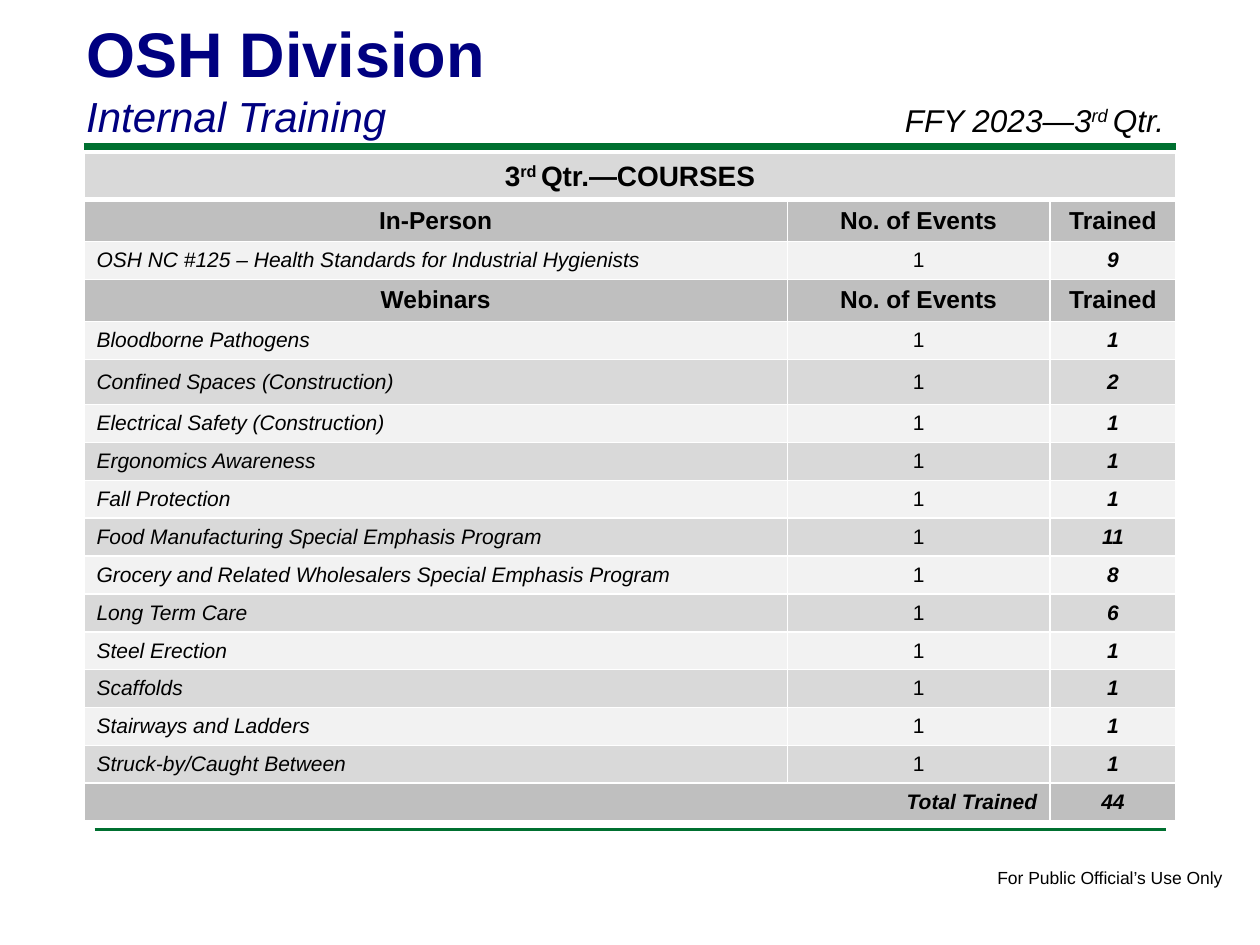
from dataclasses import dataclass

from lxml.etree import SubElement
from pptx import Presentation
from pptx.dml.color import RGBColor
from pptx.enum.text import MSO_ANCHOR, MSO_AUTO_SIZE, PP_ALIGN
from pptx.oxml.ns import qn
from pptx.util import Inches, Pt


@dataclass(frozen=True)
class Theme:
    font: str = "Arial"
    navy: str = "000080"
    green: str = "007030"
    black: str = "000000"
    white: str = "FFFFFF"
    heading_fill: str = "BFBFBF"
    dark_band: str = "D9D9D9"
    light_band: str = "F2F2F2"
    title: int = 36
    subtitle: int = 24
    period: int = 18
    table_title: int = 16
    heading: int = 14
    body: int = 12
    footer: int = 10


theme = Theme()

presentation = Presentation()
presentation.slide_width = Inches(10)
presentation.slide_height = Inches(7.5)
slide = presentation.slides.add_slide(presentation.slide_layouts[5])

# Grid: 12 columns by 90 rows
column = presentation.slide_width / 12
row = presentation.slide_height / 90


def write(paragraph, text, size, color=theme.black, bold=False, italic=False,
          align=PP_ALIGN.LEFT):
    """Fill a paragraph; the part between ^ marks is superscript."""
    paragraph.alignment = align
    for index, part in enumerate(text.split("^")):
        run = paragraph.add_run()
        run.text = part
        if index % 2:
            run.font._element.set("baseline", "30000")
    font = paragraph.font
    font.name, font.size = theme.font, Pt(size)
    font.bold, font.italic = bold, italic
    font.color.rgb = RGBColor.from_string(color)


def fill_cell(cell, text, fill, size, bottom=1, **style):
    """Write a middle-anchored cell with white borders and a plain fill."""
    cell.vertical_anchor = MSO_ANCHOR.MIDDLE
    write(cell.text_frame.paragraphs[0], text, size, **style)
    properties = cell._tc.get_or_add_tcPr()
    for side, width in (("L", 1), ("R", 1), ("T", 1), ("B", bottom)):
        border = SubElement(properties, qn(f"a:ln{side}"), w=str(Pt(width)))
        solid = SubElement(border, qn("a:solidFill"))
        SubElement(solid, qn("a:srgbClr"), val=theme.white)
    cell.fill.solid()
    cell.fill.fore_color.rgb = RGBColor.from_string(fill)


# Rules above and below the table
for inset, level, width in ((0.8, 14, 4), (0.9, 79, 2)):
    rule = slide.shapes.add_connector(
        1, int(inset * column), int(level * row),
        int((12 - inset) * column), int(level * row))
    rule.line.color.rgb = RGBColor.from_string(theme.green)
    rule.line.width = Pt(width)
    SubElement(rule._element.spPr, qn("a:effectLst"))

# Title and subtitle
title = slide.shapes.title
title.left, title.top = int(0.7 * column), int(0.7 * row)
title.width, title.height = int(9.9 * column), int(13.3 * row)
frame = title.text_frame
frame.word_wrap = True
frame.auto_size = MSO_AUTO_SIZE.NONE
frame.vertical_anchor = MSO_ANCHOR.BOTTOM
write(frame.paragraphs[0], "OSH Division", theme.title, theme.navy, bold=True)
write(frame.add_paragraph(), "Internal Training", theme.subtitle, theme.navy,
      italic=True)

# Reporting period and footer
for text, left, top, width, height, size, italic, wrap in (
        ("FFY 2023—3^rd ^Qtr.", 8.5, 9, 3, 4.8, theme.period, True, True),
        ("For Public Official’s Use Only", 9.38, 82, 2.41, 3.2, theme.footer,
         False, False)):
    box = slide.shapes.add_textbox(int(left * column), int(top * row),
                                   int(width * column), int(height * row))
    box.text_frame.word_wrap = wrap
    write(box.text_frame.paragraphs[0], text, size, italic=italic)

# Course table: each section has a heading row and its courses
sections = (
    ("In-Person", (
        ("OSH NC #125 – Health Standards for Industrial Hygienists", 1, 9),)),
    ("Webinars", (
        ("Bloodborne Pathogens", 1, 1),
        ("Confined Spaces (Construction)", 1, 2),
        ("Electrical Safety (Construction)", 1, 1),
        ("Ergonomics Awareness", 1, 1),
        ("Fall Protection", 1, 1),
        ("Food Manufacturing Special Emphasis Program", 1, 11),
        ("Grocery and Related Wholesalers Special Emphasis Program", 1, 8),
        ("Long Term Care", 1, 6),
        ("Steel Erection", 1, 1),
        ("Scaffolds", 1, 1),
        ("Stairways and Ladders", 1, 1),
        ("Struck-by/Caught Between", 1, 1))),
)
row_heights = [0.32] + [0.29] * 3 + [0.26, 0.36] + [0.26] * 11
table = slide.shapes.add_table(
    len(row_heights), 3, int(0.8 * column), int(14.6 * row),
    int(10.4 * column), Inches(sum(row_heights))).table
table.first_row = table.horz_banding = False
for table_column, share in zip(table.columns, (6.7, 2.5, 1.2)):
    table_column.width = int(share * column)
for table_row, height in zip(table.rows, row_heights):
    table_row.height = Inches(height)

# Table title
table.cell(0, 0).merge(table.cell(0, 2))
fill_cell(table.cell(0, 0), "3^rd ^Qtr.—COURSES", theme.dark_band,
          theme.table_title, bottom=3, bold=True, align=PP_ALIGN.CENTER)

# Sections
position = 1
for section, courses in sections:
    for index, text in enumerate((section, "No. of Events", "Trained")):
        fill_cell(table.cell(position, index), text, theme.heading_fill,
                  theme.heading, bold=True, align=PP_ALIGN.CENTER)
    position += 1
    for number, course in enumerate(courses):
        fill = theme.dark_band if number % 2 else theme.light_band
        for index, value in enumerate(course):
            fill_cell(table.cell(position, index), str(value), fill, theme.body,
                      bold=index == 2, italic=index != 1,
                      align=PP_ALIGN.CENTER if index else PP_ALIGN.LEFT)
        position += 1

# Total
total = sum(course[2] for section, courses in sections for course in courses)
table.cell(position, 0).merge(table.cell(position, 1))
for index, text, align in ((0, "Total Trained", PP_ALIGN.RIGHT),
                           (2, str(total), PP_ALIGN.CENTER)):
    fill_cell(table.cell(position, index), text, theme.heading_fill, theme.body,
              bold=True, italic=True, align=align)

presentation.save("out.pptx")
